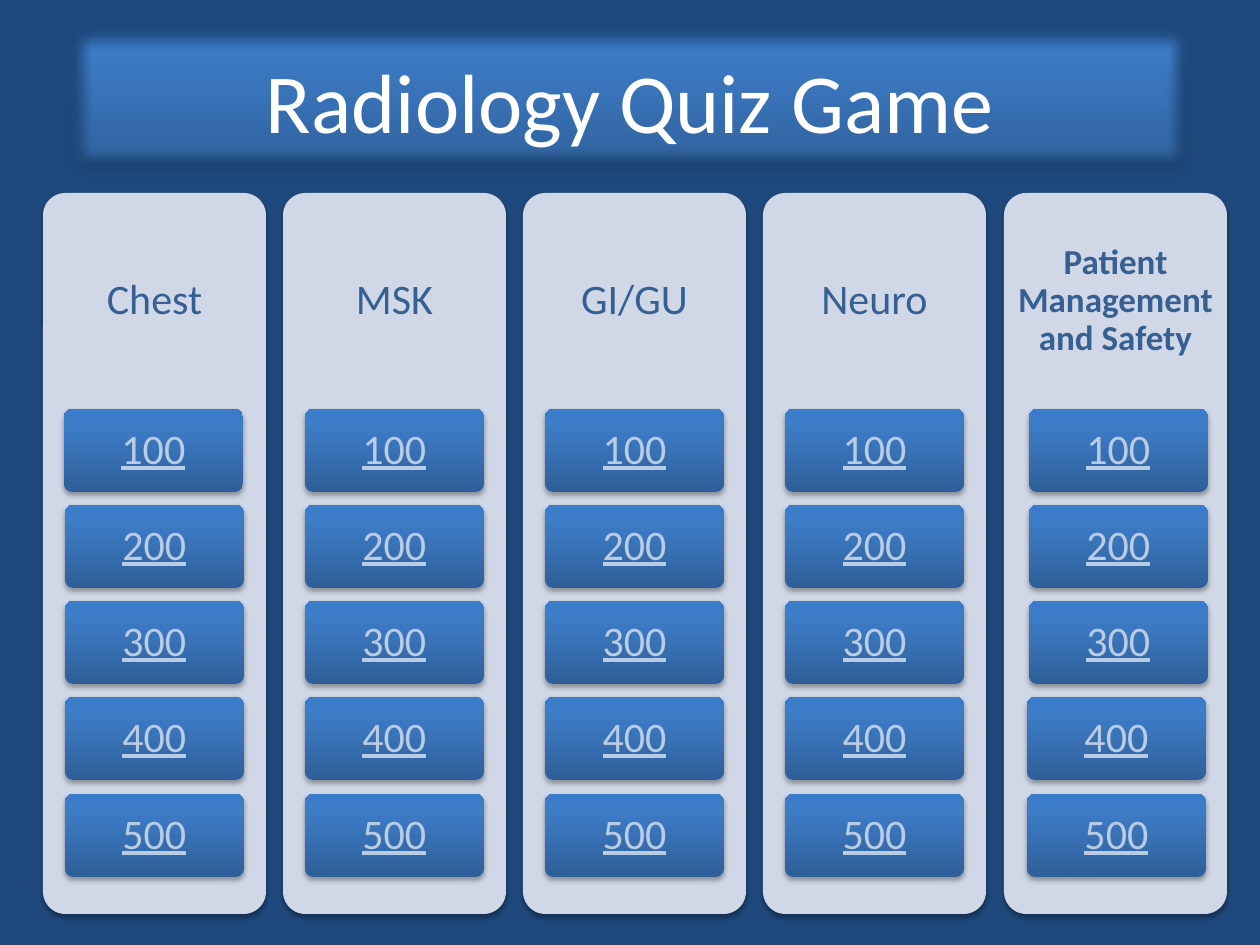
"""Build a quiz board slide with five topics and five prize buttons each."""
import pptx
import pptx.dml.color
import pptx.enum.shapes
import pptx.enum.text
import pptx.oxml
import pptx.oxml.ns
import pptx.util

RGB = pptx.dml.color.RGBColor
KIND = pptx.enum.shapes.MSO_SHAPE
NAVY = RGB(0x1F, 0x49, 0x7D)
PALE = RGB(0xD0, 0xD8, 0xE8)
STEEL = RGB(0x37, 0x60, 0x92)
ICE = RGB(0xB8, 0xCC, 0xE4)
WHITE = RGB(0xFF, 0xFF, 0xFF)
STOPS = [(0, RGB(0x2F, 0x5F, 0x99)), (80, RGB(0x3D, 0x7C, 0xC7)), (100, RGB(0x3A, 0x7C, 0xCB))]
PX = 914400 / 126


def panel(kind, box, fill=None, blur=3.1, drop=1.8, alpha=35, soft=0):
    shape = slide.shapes.add_shape(kind, *[round(v * PX) for v in box])
    if kind == KIND.ROUNDED_RECTANGLE:
        shape.adjustments[0] = 0.1
    shape.line.fill.background()
    shape.shadow.inherit = False
    props = shape.fill
    if fill:
        props.solid()
        props.fore_color.rgb = fill
    else:
        props.background()
        stops = "".join(f'<a:gs pos="{at * 1000}"><a:srgbClr val="{tone}"/></a:gs>' for at, tone in STOPS)
        grad = pptx.oxml.parse_xml(
            f'<a:gradFill {pptx.oxml.ns.nsdecls("a")} rotWithShape="1"><a:gsLst>{stops}</a:gsLst>'
            '<a:lin ang="16200000" scaled="0"/></a:gradFill>')
        old = shape.element.spPr.find(pptx.oxml.ns.qn("a:noFill"))
        shape.element.spPr.replace(old, grad)
    edge = f'<a:softEdge rad="{soft}"/>' if soft else ""
    glow = pptx.oxml.parse_xml(
        f'<a:effectLst {pptx.oxml.ns.nsdecls("a")}><a:outerShdw blurRad="{round(blur * 12700)}" '
        f'dist="{round(drop * 12700)}" dir="5400000" rotWithShape="0"><a:srgbClr val="000000">'
        f'<a:alpha val="{alpha * 1000}"/></a:srgbClr></a:outerShdw>{edge}</a:effectLst>')
    bare = shape.element.spPr.find(pptx.oxml.ns.qn("a:effectLst"))
    shape.element.spPr.replace(bare, glow)
    return shape


def label(shape, text, color, size=24, pad=(13, 13), gap=0.9, **style):
    frame = shape.text_frame
    side, top = [round(v * PX) for v in pad]
    look = {"word_wrap": True, "vertical_anchor": pptx.enum.text.MSO_ANCHOR.MIDDLE,
            "margin_left": side, "margin_right": side, "margin_top": top, "margin_bottom": top}
    for key, value in look.items():
        setattr(frame, key, value)
    para = frame.paragraphs[0]
    para.alignment = pptx.enum.text.PP_ALIGN.CENTER
    para.line_spacing = gap
    run = para.add_run()
    run.text = text
    run.font.color.rgb = color
    for key, value in {"name": "Calibri", "size": pptx.util.Pt(size), **style}.items():
        setattr(run.font, key, value)


deck = pptx.Presentation()
deck.slide_width, deck.slide_height = round(1260 * PX), round(945 * PX)
slide = deck.slides.add_slide(deck.slide_layouts[6])
slide.background.fill.solid()
slide.background.fill.fore_color.rgb = NAVY

topics = [("Chest", {}), ("MSK", {}), ("GI/GU", {}), ("Neuro", {}),
          ("Patient Management and Safety", {"size": 20, "bold": True, "pad": (10, 10)})]
nudge = {(0, 0): -1, (4, 0): 3, (4, 1): 3, (4, 2): 3, (4, 3): 1, (4, 4): 1}

for col, (topic, style) in enumerate(topics):
    left = 43 + col * 961 // 4
    panel(KIND.ROUNDED_RECTANGLE, (left, 193, 223, 721), PALE)
    head = slide.shapes.add_textbox(*[round(v * PX) for v in (left, 193, 223, 216)])
    label(head, topic, STEEL, **style)
    for row in range(5):
        spot = left + 22 + nudge.get((col, row), 0)
        button = panel(KIND.ROUNDED_RECTANGLE, (spot, 409 + row * 385 // 4, 179, 83))
        label(button, str(100 * (row + 1)), ICE, pad=(11, 9), underline=True)

title = panel(KIND.RECTANGLE, (63, 21, 1134, 158), blur=3.5, drop=2.2, alpha=32, soft=112500)
label(title, "Radiology Quiz Game", WHITE, size=48, pad=(13, 6), gap=1.0)

deck.save("out.pptx")
